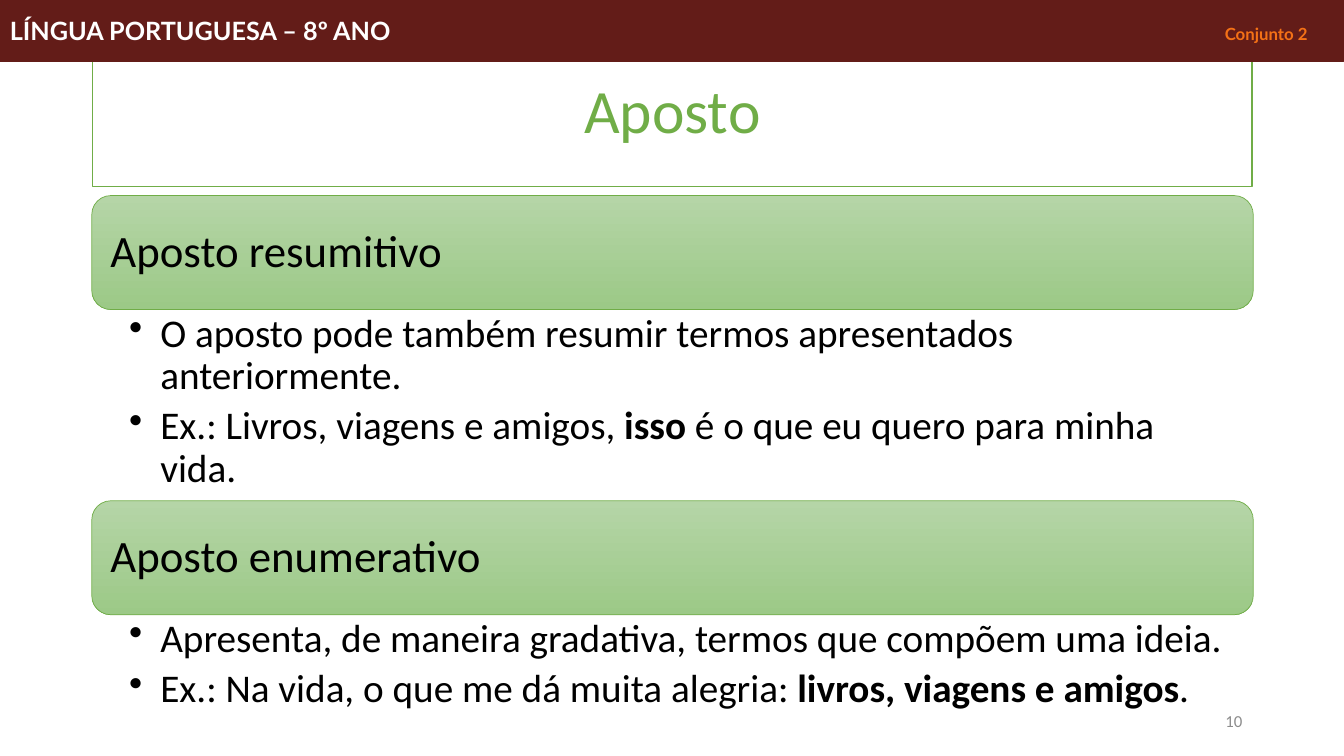
from dataclasses import dataclass

from lxml.etree import SubElement as Sub
from pptx import Presentation
from pptx.dml.color import RGBColor as Rgb
from pptx.enum.shapes import MSO_SHAPE as Form
from pptx.enum.text import MSO_ANCHOR as Anchor, PP_ALIGN as Align
from pptx.oxml.ns import qn
from pptx.util import Inches, Pt


@dataclass(frozen=True)
class Theme:
    # Colours
    white: str = "FFFFFF"
    ink: str = "000000"
    green: str = "70AD47"
    pale: str = "B5D5A7"
    leaf: str = "9CC987"
    wine: str = "631C18"
    orange: str = "F47116"
    gray: str = "8C8C8C"
    # Type
    body: str = "Calibri"
    head: str = "Lato"
    title: int = 44
    label: int = 32
    point: int = 28
    banner: int = 18
    small: int = 12


class Page:
    """One slide on a grid of 100 columns by 100 rows."""

    def __init__(self, deck, theme):
        self.theme = theme
        self.col = deck.slide_width / 100
        self.row = deck.slide_height / 100
        self.shapes = deck.slides.add_slide(deck.slide_layouts[6]).shapes

    def place(self, x, y, w, h):
        return [int(n) for n in (x * self.col, y * self.row,
                                 w * self.col, h * self.row)]

    def box(self, area, fill, line, width, form=Form.RECTANGLE):
        shape = self.shapes.add_shape(form, *self.place(*area))
        shape.shadow.inherit = False
        if isinstance(fill, tuple):
            shape.fill.gradient()
            shape.fill.gradient_angle = 270
            for stop, tone in zip(shape.fill.gradient_stops, fill):
                stop.color.rgb = Rgb.from_string(tone)
        else:
            shape.fill.solid()
            shape.fill.fore_color.rgb = Rgb.from_string(fill)
        shape.line.color.rgb = Rgb.from_string(line)
        shape.line.width = Pt(width)
        return self.setup(shape, Anchor.MIDDLE)

    def text(self, area, anchor):
        return self.setup(self.shapes.add_textbox(*self.place(*area)), anchor)

    def setup(self, shape, anchor):
        frame = shape.text_frame
        frame.word_wrap = True
        frame.vertical_anchor = anchor
        return frame

    def style(self, para, size, tone, align=Align.LEFT, space=0.9):
        para.alignment = align
        para.line_spacing = space
        para.font.name = self.theme.body
        para.font.size = Pt(size)
        para.font.color.rgb = Rgb.from_string(tone)

    def line(self, frame, words, *look):
        para = frame.paragraphs[0]
        para.text = words
        self.style(para, *look)

    def card(self, area, words):
        t = self.theme
        frame = self.box(area, (t.pale, t.leaf), t.green, 0.5,
                         Form.ROUNDED_RECTANGLE)
        frame.margin_left = frame.margin_right = Inches(0.13)
        self.line(frame, words, t.label, t.ink)

    def points(self, area, items):
        """Bulleted list; words between asterisks are bold."""
        t = self.theme
        frame = self.text(area, Anchor.TOP)
        frame.margin_left, frame.margin_right = Inches(0.37), Inches(0.22)
        frame.margin_top = frame.margin_bottom = Inches(0.04)
        for i, item in enumerate(items):
            para = frame.add_paragraph() if i else frame.paragraphs[0]
            self.style(para, t.point, t.ink)
            para.space_after = Pt(t.point * 0.2)
            for k, words in enumerate(item.split("*")):
                run = para.add_run()
                run.text = words
                if k % 2:
                    run.font.bold = True
            props = para._p.get_or_add_pPr()
            props.set("marL", str(Inches(0.31)))
            props.set("indent", str(-Inches(0.31)))
            mark = props.makeelement(qn("a:buChar"), {"char": "•"})
            props.find(qn("a:defRPr")).addprevious(mark)

    def banner(self, area, left, right, stop):
        """Bar with a second text at a tab stop."""
        t = self.theme
        frame = self.box(area, t.wine, t.wine, 0.75)
        para = frame.paragraphs[0]
        para.alignment = Align.LEFT
        para.font.name, para.font.bold = t.head, True
        for words, size, tone in ((left + "\t", t.banner, t.white),
                                  (right, t.small, t.orange)):
            run = para.add_run()
            run.text = words
            run.font.size = Pt(size)
            run.font.color.rgb = Rgb.from_string(tone)
        props = para._p.get_or_add_pPr()
        tabs = props.makeelement(qn("a:tabLst"), {})
        Sub(tabs, qn("a:tab"), pos=str(Inches(stop)), algn="l")
        props.find(qn("a:defRPr")).addprevious(tabs)


TOPICS = [
    ("Aposto resumitivo", 25.3, [
        "O aposto pode também resumir termos apresentados anteriormente.",
        "Ex.: Livros, viagens e amigos, *isso* é o que eu quero para minha "
        "vida."]),
    ("Aposto enumerativo", 13.7, [
        "Apresenta, de maneira gradativa, termos que compõem uma ideia.",
        "Ex.: Na vida, o que me dá muita alegria: "
        "*livros, viagens e amigos*."]),
]


def main():
    deck = Presentation()
    deck.slide_width, deck.slide_height = Inches(13.33), Inches(7.5)
    t = Theme()
    page = Page(deck, t)

    # Title
    frame = page.box((6.9, 5.33, 86.27, 19.33), t.white, t.green, 1)
    page.line(frame, "Aposto", t.title, t.green, Align.CENTER)

    # Topics: a card with its points below, stacked
    left, wide, tall, top = 6.83, 86.42, 15.07, 25.87
    for name, depth, items in TOPICS:
        page.card((left, top, wide, tall), name)
        page.points((left, top + tall, wide, depth), items)
        top += tall + depth

    # Page number
    frame = page.text((70.67, 92.67, 22.5, 5.33), Anchor.MIDDLE)
    page.line(frame, "10", t.small, t.gray, Align.RIGHT, 1.0)

    # Banner
    page.banner((0, 0, 100, 8.13), "LÍNGUA PORTUGUESA – 8º ANO",
                "Conjunto 2", 12.05)

    deck.save("out.pptx")


if __name__ == "__main__":
    main()
